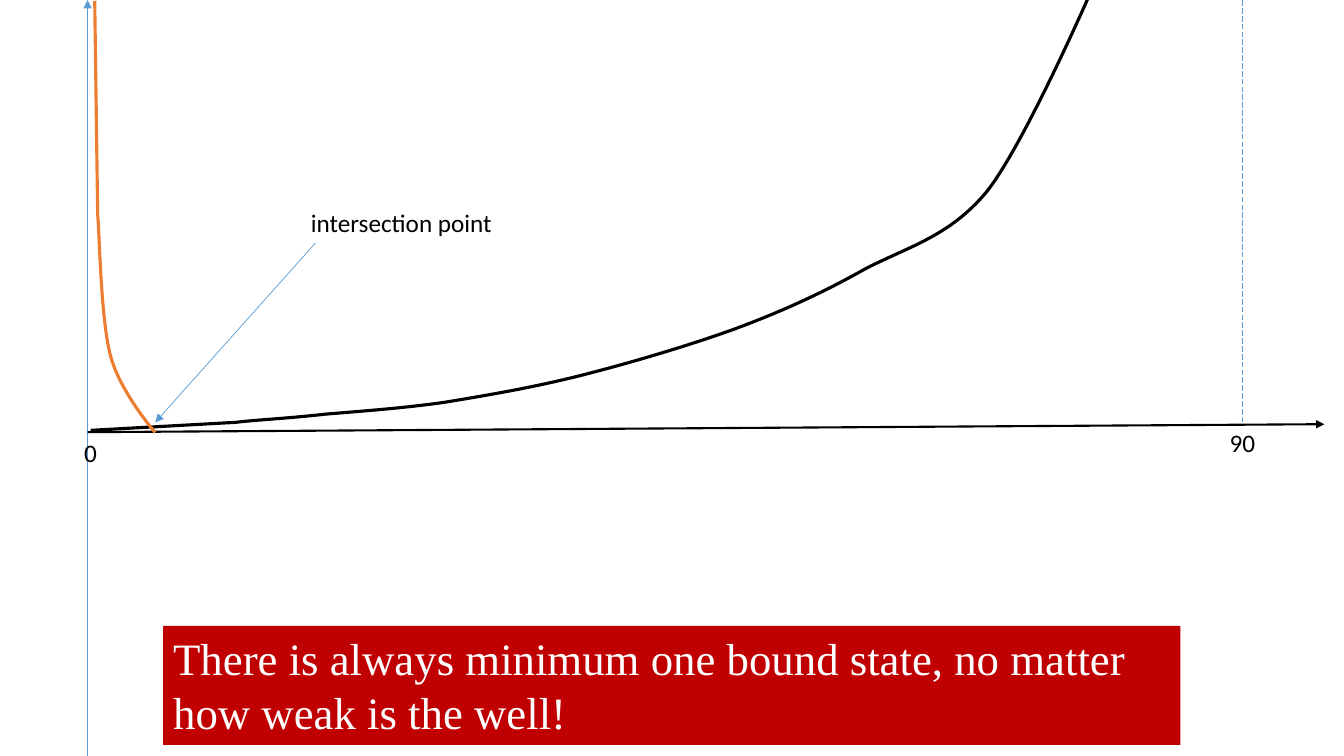
import dataclasses

import lxml.etree
import pptx
import pptx.dml.color
import pptx.enum.dml
import pptx.enum.shapes
import pptx.enum.text
import pptx.oxml.ns
import pptx.shapes.base
import pptx.slide
import pptx.util

Pt = pptx.util.Pt
RGBColor = pptx.dml.color.RGBColor
qn = pptx.oxml.ns.qn
Point = tuple[float, float]

BLACK = RGBColor(0x00, 0x00, 0x00)
WHITE = RGBColor(0xFF, 0xFF, 0xFF)
BLUE = RGBColor(0x5B, 0x9B, 0xD5)
ORANGE = RGBColor(0xED, 0x7D, 0x31)
RED = RGBColor(0xC0, 0x00, 0x00)


@dataclasses.dataclass
class Wire:
    start: Point
    end: Point
    color: RGBColor = BLUE
    width: float = 0.5
    arrow: bool = True


@dataclasses.dataclass
class Curve:
    """A straight run from start to bend, then cubic arcs of three points."""
    start: Point
    bend: Point
    arcs: list[tuple[Point, Point, Point]]
    color: RGBColor


@dataclasses.dataclass
class Label:
    text: str
    left: float
    top: float
    width: float
    height: float = 29


@dataclasses.dataclass
class Banner(Label):
    """A label on a red box."""


PARTS = [
    Wire((62.6, 540), (62.6, 0)),
    Wire((62.6, 308.7), (946, 303), BLACK, 1.5),
    Curve((64.8, 307.4), (168.5, 301.7), [
        ((179.3, 300.2), (206.6, 298.8), (231.8, 295.9)),
        ((257, 293.8), (288, 291.6), (318.2, 287.3)),
        ((348.5, 282.2), (378.7, 277.2), (413.3, 268.6)),
        ((447.8, 259.9), (491.8, 247), (525.6, 234.7)),
        ((560.2, 221.8), (588.2, 208.8), (617.8, 192.2)),
        ((648, 176.4), (678.2, 169.2), (704.9, 136.8)),
        ((730.8, 104.4), (776.9, -0.7), (776.9, -0.7)),
    ], BLACK),
    Label("0", 53, 308.9, 23.8),
    Label("90", 871.2, 301.7, 33.1),
    Wire((887.3, 301.7), (887.3, 0), arrow=False),
    Curve((67.7, 0.7), (69.8, 153.4), [
        ((71.3, 169.9), (72, 229), (79.2, 254.9)),
        ((86.4, 280.8), (110.9, 308.9), (110.9, 308.9)),
    ], ORANGE),
    Wire((225.4, 173.5), (110.9, 301.7)),
    Label("intersection point", 215, 144.7, 145.7),
    Banner("There is always minimum one bound state, no matter "
           "how weak is the well!", 116.6, 447.1, 726.5, 85),
]


def draw_wire(slide: pptx.slide.Slide, wire: Wire) -> None:
    ends = [Pt(value) for value in (*wire.start, *wire.end)]
    line = slide.shapes.add_connector(
        pptx.enum.shapes.MSO_CONNECTOR.STRAIGHT, *ends)
    line.line.color.rgb = wire.color
    line.line.width = Pt(wire.width)
    props = line.element.find(qn("p:spPr"))
    if wire.arrow:
        tail = lxml.etree.SubElement(props.find(qn("a:ln")), qn("a:tailEnd"))
        tail.set("type", "triangle")
    else:
        line.line.dash_style = pptx.enum.dml.MSO_LINE.LONG_DASH
    lxml.etree.SubElement(props, qn("a:effectLst"))


def draw_curve(slide: pptx.slide.Slide, curve: Curve) -> None:
    knots = [curve.bend, *(arc[-1] for arc in curve.arcs)]
    pen = slide.shapes.build_freeform(*map(Pt, curve.start))
    pen.add_line_segments([(Pt(x), Pt(y)) for x, y in knots], close=False)
    shape = pen.convert_to_shape()
    shape.shadow.inherit = False
    shape.fill.background()
    shape.line.color.rgb = curve.color
    shape.line.width = Pt(2.25)
    bend_arcs(shape, curve)


def bend_arcs(shape: pptx.shapes.base.BaseShape, curve: Curve) -> None:
    """Turn every line after the bend into its cubic arc."""
    lines = list(shape.element.iter(qn("a:lnTo")))[1:]
    for line, arc in zip(lines, curve.arcs):
        cubic = lxml.etree.Element(qn("a:cubicBezTo"))
        for x, y in arc:
            spot = lxml.etree.SubElement(cubic, qn("a:pt"))
            spot.set("x", str(Pt(x) - shape.left))
            spot.set("y", str(Pt(y) - shape.top))
        line.getparent().replace(line, cubic)


def frame(label: Label) -> list[pptx.util.Length]:
    return [Pt(v) for v in (label.left, label.top, label.width, label.height)]


def write(shape: pptx.shapes.base.BaseShape, text: str, font: str,
          size: float, color: RGBColor, wrap: bool) -> None:
    body = shape.text_frame
    body.text = text
    body.word_wrap = wrap
    body.auto_size = pptx.enum.text.MSO_AUTO_SIZE.SHAPE_TO_FIT_TEXT
    body.vertical_anchor = pptx.enum.text.MSO_ANCHOR.TOP
    para = body.paragraphs[0]
    para.alignment = pptx.enum.text.PP_ALIGN.LEFT
    run = para.runs[0]
    run.font.name = font
    run.font.size = Pt(size)
    run.font.color.rgb = color


def draw_label(slide: pptx.slide.Slide, label: Label) -> None:
    box = slide.shapes.add_textbox(*frame(label))
    write(box, label.text, "Calibri", 18, BLACK, False)


def draw_banner(slide: pptx.slide.Slide, banner: Banner) -> None:
    box = slide.shapes.add_shape(
        pptx.enum.shapes.MSO_SHAPE.RECTANGLE, *frame(banner))
    box.shadow.inherit = False
    box.fill.solid()
    box.fill.fore_color.rgb = RED
    box.line.fill.background()
    write(box, banner.text, "Times New Roman", 32, WHITE, True)


TOOLS = {Wire: draw_wire, Curve: draw_curve,
         Label: draw_label, Banner: draw_banner}


def main() -> None:
    deck = pptx.Presentation()
    deck.slide_width, deck.slide_height = Pt(960), Pt(540)
    slide = deck.slides.add_slide(deck.slide_layouts[6])
    for part in PARTS:
        TOOLS[type(part)](slide, part)
    deck.save("out.pptx")


if __name__ == "__main__":
    main()
